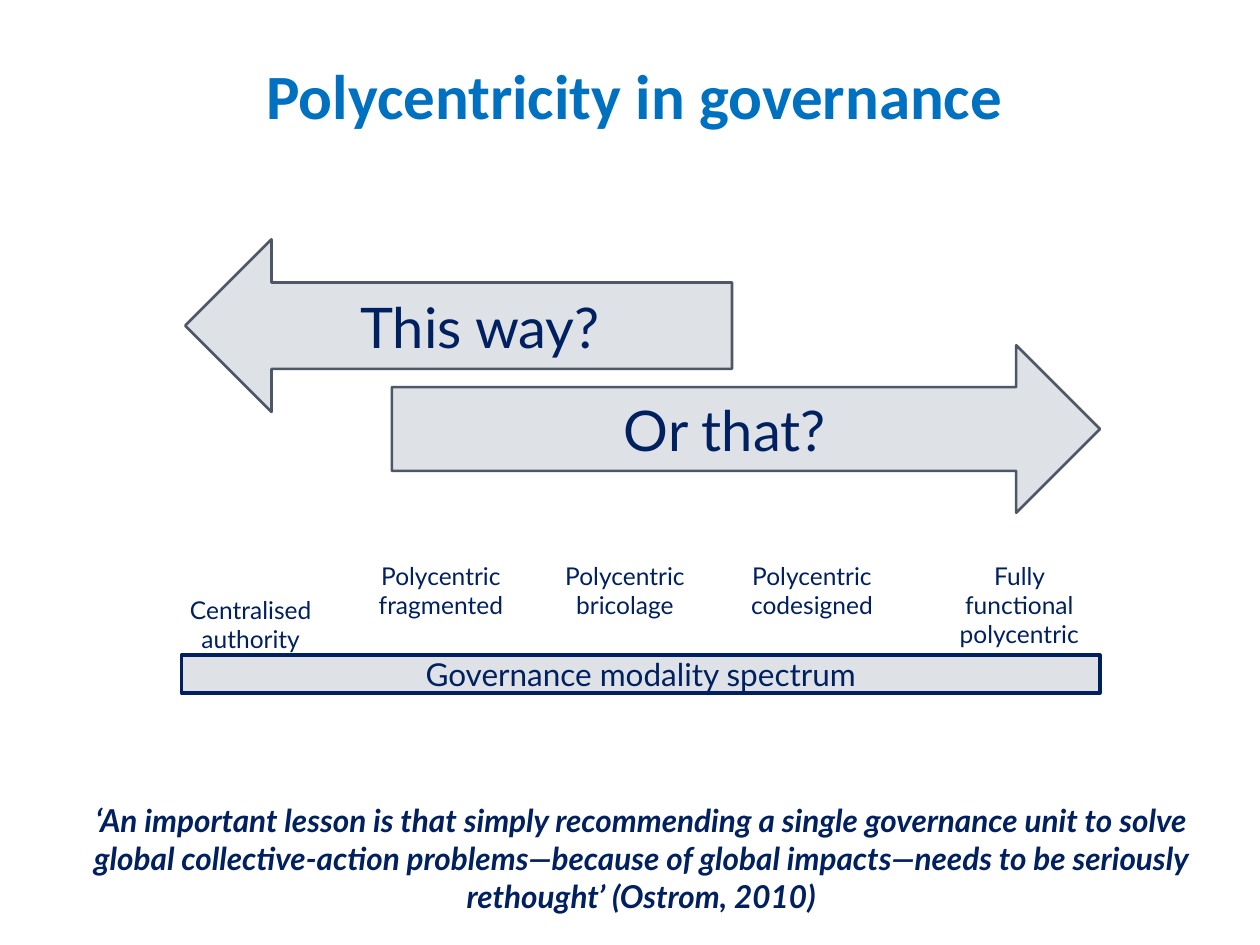
import pptx
import pptx.util
import pptx.dml.color
import pptx.enum.shapes
import pptx.enum.text

Inches, Pt = pptx.util.Inches, pptx.util.Pt
RGBColor = pptx.dml.color.RGBColor
MSO_SHAPE = pptx.enum.shapes.MSO_SHAPE
MSO_ANCHOR = pptx.enum.text.MSO_ANCHOR

NAVY = RGBColor(0x00, 0x20, 0x60)
BLUE = RGBColor(0x00, 0x70, 0xC0)
PALE_GREY = RGBColor(0xDE, 0xE1, 0xE6)
SLATE = RGBColor(0x4E, 0x57, 0x68)


def write_centred(shape, text, size, font="Lato", color=NAVY, bold=False,
                  italic=False, anchor=MSO_ANCHOR.TOP):
    frame = shape.text_frame
    frame.word_wrap = True
    frame.auto_size = pptx.enum.text.MSO_AUTO_SIZE.NONE
    frame.vertical_anchor = anchor
    frame.text = text
    paragraph = frame.paragraphs[0]
    paragraph.alignment = pptx.enum.text.PP_ALIGN.CENTER
    run_font = paragraph.runs[0].font
    run_font.name, run_font.size = font, Pt(size)
    run_font.bold, run_font.italic = bold, italic
    run_font.color.rgb = color


def add_filled(kind, left, top, width, height, line_color, line_width, text, size):
    shape = slide.shapes.add_shape(
        kind, Inches(left), Inches(top), Inches(width), Inches(height))
    shape.shadow.inherit = False
    shape.fill.solid()
    shape.fill.fore_color.rgb = PALE_GREY
    shape.line.color.rgb = line_color
    shape.line.width = Pt(line_width)
    write_centred(shape, text, size, anchor=MSO_ANCHOR.MIDDLE)


deck = pptx.Presentation()
deck.slide_width, deck.slide_height = Inches(10), Inches(7.5)
slide = deck.slides.add_slide(deck.slide_layouts[5])

title = slide.shapes.title
title.left, title.top = Inches(0), Inches(0.4)
title.width, title.height = Inches(10.07), Inches(0.86)
write_centred(title, "Polycentricity in governance", 36, "Calibri", BLUE, bold=True)

# Stages along the spectrum: text, left, top, width, height
stages = [
    ("Centralised authority", 1.25, 4.67, 1.48, 0.57),
    ("Polycentric fragmented", 2.82, 4.4, 1.36, 0.57),
    ("Polycentric bricolage", 4.37, 4.4, 1.18, 0.57),
    ("Polycentric codesigned", 5.81, 4.4, 1.27, 0.57),
    ("Fully functional polycentric", 7.35, 4.4, 1.48, 0.81),
]
for stage, *place in stages:
    label = slide.shapes.add_textbox(*map(Inches, place))
    write_centred(label, stage, 14)

add_filled(MSO_SHAPE.RECTANGLE, 1.44, 5.2, 7.29, 0.3, NAVY, 2,
           "Governance modality spectrum", 18)
add_filled(MSO_SHAPE.RIGHT_ARROW, 3.11, 2.74, 5.62, 1.33, SLATE, 1.5, "Or that?", 32)
add_filled(MSO_SHAPE.LEFT_ARROW, 1.47, 1.9, 4.34, 1.37, SLATE, 1.5, "This way?", 32)

quote = slide.shapes.add_textbox(Inches(0.39), Inches(6.31), Inches(9.4), Inches(1.01))
write_centred(
    quote,
    "‘An important lesson is that simply recommending a single governance unit "
    "to solve global collective-action problems—because of global impacts—needs "
    "to be seriously rethought’ (Ostrom, 2010)",
    18, bold=True, italic=True)
quote.text_frame.paragraphs[0].space_after = Pt(6)

deck.save("out.pptx")
